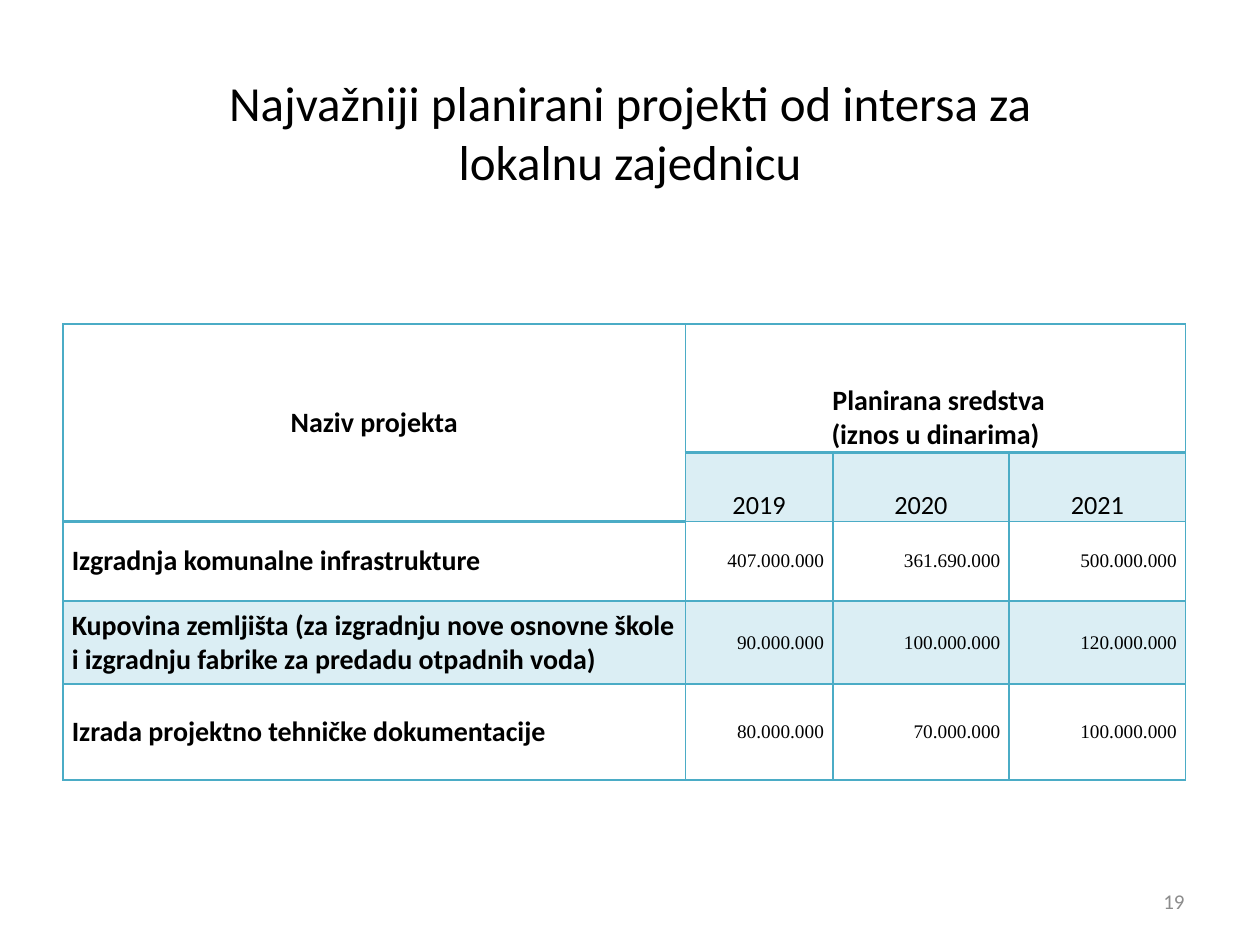
from lxml.etree import SubElement
from pptx import Presentation
from pptx.dml.color import RGBColor
from pptx.enum.text import MSO_ANCHOR as ANCHOR, PP_ALIGN as ALIGN
from pptx.oxml.ns import qn
from pptx.util import Inches, Pt

COLORS = {"text": "000000", "number": "8C8C8C", "border": "4BACC6", "band": "DBEEF4"}
COLS = [4.94, 1.17, 1.4, 1.4]
ROWS = [1.02, 0.55, 0.63, 0.66, 0.76]
YEARS = ["2019", "2020", "2021"]
PROJECTS = [
    ("Izgradnja komunalne infrastrukture",
     ["407.000.000", "361.690.000", "500.000.000"]),
    ("Kupovina zemljišta (za izgradnju nove osnovne škole i izgradnju "
     "fabrike za predadu otpadnih voda)",
     ["90.000.000", "100.000.000", "120.000.000"]),
    ("Izrada projektno tehničke dokumentacije",
     ["80.000.000", "70.000.000", "100.000.000"]),
]


def place(s, left, top, width, height):
    s.left, s.top, s.width, s.height = map(Inches, (left, top, width, height))


def add_run(p, text, size, font="Calibri", bold=False, color="text"):
    r = p.add_run()
    r.text = text
    r.font.size, r.font.name, r.font.bold = Pt(size), font, bold
    r.font.color.rgb = RGBColor.from_string(COLORS[color])


def add_title(slide, lines):
    s = slide.shapes.title
    place(s, 0.5, 0.3, 9, 1.48)
    tf = s.text_frame
    tf.vertical_anchor = ANCHOR.MIDDLE
    p = tf.paragraphs[0]
    p.alignment = ALIGN.CENTER
    for i, line in enumerate(lines):
        if i:
            p.add_line_break()
        add_run(p, line, 28)


def add_page_number(slide, number):
    s = slide.shapes.add_textbox(*map(Inches, (7.17, 6.95, 2.33, 0.4)))
    tf = s.text_frame
    tf.word_wrap = True
    tf.vertical_anchor = ANCHOR.MIDDLE
    p = tf.paragraphs[0]
    p.alignment = ALIGN.RIGHT
    add_run(p, number, 12, color="number")


def set_borders(cell, top, bottom):
    """Draw all four sides; top and bottom are widths in points."""
    tc_pr = cell._tc.get_or_add_tcPr()
    for side, width in (("L", 1), ("R", 1), ("T", top), ("B", bottom)):
        ln = SubElement(tc_pr, qn(f"a:ln{side}"), w=str(Pt(width)))
        fill = SubElement(ln, qn("a:solidFill"))
        SubElement(fill, qn("a:srgbClr"), val=COLORS["border"])


def rule_width(edge, col):
    """Header rules are heavy; edges count from the top of the table."""
    return 2 if edge == 1 or (edge == 2 and col == 0) else 1


def format_cells(table):
    for row in range(len(ROWS)):
        for col in range(len(COLS)):
            cell = table.cell(row, col)
            set_borders(cell, rule_width(row, col), rule_width(row + 1, col))
            cell.margin_left = cell.margin_right = Inches(0.07)
            cell.margin_top = cell.margin_bottom = 0
            if row == 3 or (row == 1 and col > 0):
                cell.fill.solid()
                cell.fill.fore_color.rgb = RGBColor.from_string(COLORS["band"])
            else:
                cell.fill.background()


def write_cell(cell, lines, size, align, anchor=ANCHOR.MIDDLE, **font):
    cell.vertical_anchor = anchor
    tf = cell.text_frame
    for i, line in enumerate(lines):
        p = tf.add_paragraph() if i else tf.paragraphs[0]
        p.alignment = align
        add_run(p, line, size, **font)


def add_project_table(slide):
    frame = slide.shapes.add_table(
        len(ROWS), len(COLS), Inches(0.5), Inches(2.57),
        Inches(sum(COLS)), Inches(sum(ROWS)))
    table = frame.table
    table.first_row = table.horz_banding = False
    for column, width in zip(table.columns, COLS):
        column.width = Inches(width)
    for row, height in zip(table.rows, ROWS):
        row.height = Inches(height)
    format_cells(table)
    table.cell(0, 0).merge(table.cell(1, 0))
    table.cell(0, 1).merge(table.cell(0, 3))

    write_cell(table.cell(0, 0), ["Naziv projekta"], 16, ALIGN.CENTER, bold=True)
    write_cell(table.cell(0, 1), [" Planirana sredstva", "(iznos u dinarima)"],
               16, ALIGN.CENTER, ANCHOR.BOTTOM, bold=True)
    for col, year in enumerate(YEARS, 1):
        write_cell(table.cell(1, col), [year], 15, ALIGN.CENTER, ANCHOR.BOTTOM)
    for row, (name, amounts) in enumerate(PROJECTS, 2):
        write_cell(table.cell(row, 0), [name], 16, ALIGN.LEFT, bold=True)
        for col, amount in enumerate(amounts, 1):
            write_cell(table.cell(row, col), [amount], 11, ALIGN.RIGHT,
                       font="Times New Roman")


def main():
    prs = Presentation()
    prs.slide_width, prs.slide_height = Inches(10), Inches(7.5)
    slide = prs.slides.add_slide(prs.slide_layouts[5])
    add_title(slide, ["Najvažniji planirani projekti od intersa za",
                      "lokalnu zajednicu"])
    add_project_table(slide)
    add_page_number(slide, "19")
    prs.save("out.pptx")


if __name__ == "__main__":
    main()
